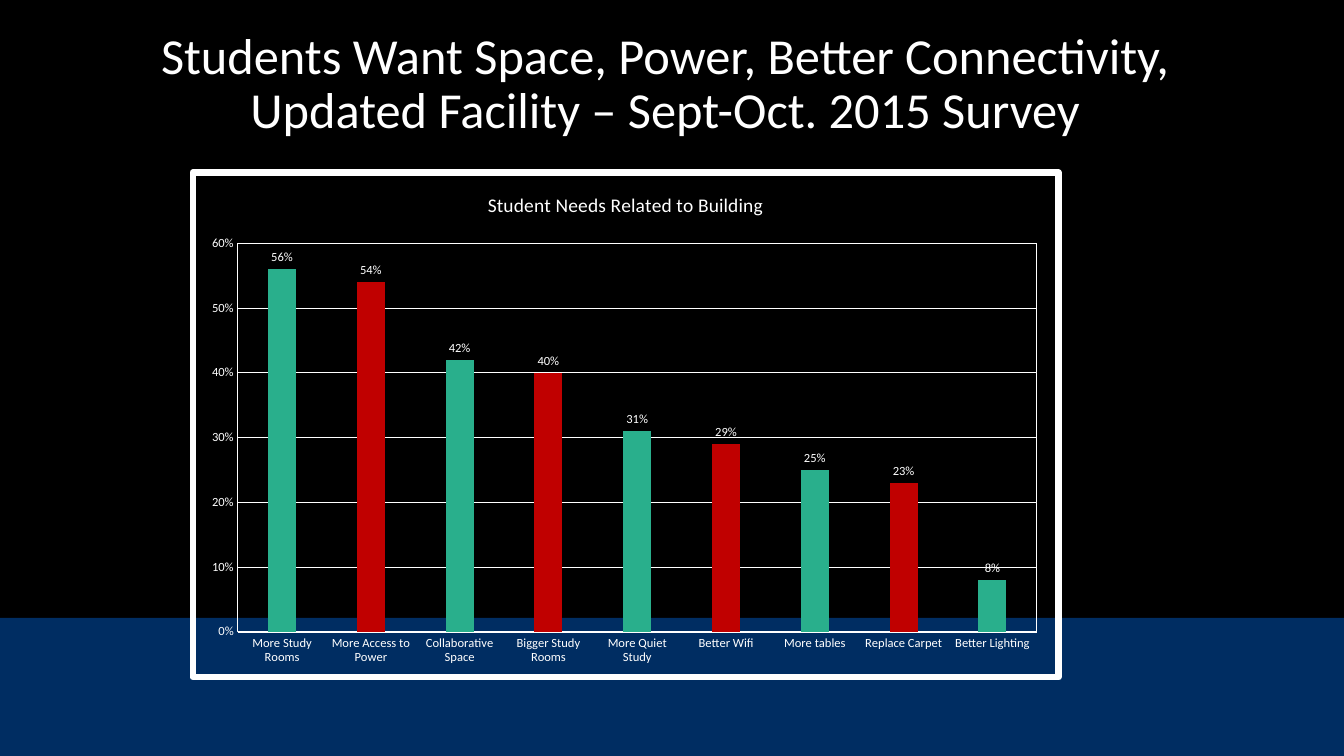
from dataclasses import dataclass
from typing import NamedTuple

from lxml.etree import _Element as Element
from pptx import Presentation
from pptx.chart.axis import _BaseAxis as Axis
from pptx.chart.chart import Chart
from pptx.chart.data import CategoryChartData
from pptx.dml.color import RGBColor
from pptx.enum.chart import XL_CHART_TYPE as ChartType
from pptx.enum.chart import XL_LABEL_POSITION as LabelPosition
from pptx.enum.chart import XL_TICK_MARK as TickMark
from pptx.enum.shapes import MSO_SHAPE as ShapeKind
from pptx.enum.text import MSO_ANCHOR as Anchor
from pptx.enum.text import PP_ALIGN as Align
from pptx.oxml import parse_xml
from pptx.oxml.ns import nsdecls, qn
from pptx.slide import Slide
from pptx.text.text import Font
from pptx.util import Inches, Pt


@dataclass(frozen=True)
class Theme:
    face: str = "Calibri"
    background: RGBColor = RGBColor(0x00, 0x00, 0x00)
    band: RGBColor = RGBColor(0x00, 0x2D, 0x62)
    ink: RGBColor = RGBColor(0xFF, 0xFF, 0xFF)
    green: RGBColor = RGBColor(0x29, 0xAF, 0x8C)
    red: RGBColor = RGBColor(0xC0, 0x00, 0x00)
    title_size: float = 36
    chart_title_size: float = 14
    chart_size: float = 10
    label_size: float = 9
    border_width: float = 4.5
    axis_width: float = 0.75
    grid_width: float = 0.25


class Need(NamedTuple):
    name: str
    share: float


THEME = Theme()
NEEDS = [
    Need("More Study Rooms", 0.56),
    Need("More Access to Power", 0.54),
    Need("Collaborative Space", 0.42),
    Need("Bigger Study Rooms", 0.40),
    Need("More Quiet Study", 0.31),
    Need("Better Wifi", 0.29),
    Need("More tables", 0.25),
    Need("Replace Carpet", 0.23),
    Need("Better Lighting", 0.08),
]


def style_font(font: Font, size: float) -> None:
    font.name = THEME.face
    font.size = Pt(size)
    font.bold = False
    font.color.rgb = THEME.ink


def outline(width: float) -> Element:
    return parse_xml(
        f'<c:spPr {nsdecls("c", "a")}><a:noFill/><a:ln w="{Pt(width)}">'
        f'<a:solidFill><a:srgbClr val="{THEME.ink}"/></a:solidFill>'
        "<a:round/></a:ln></c:spPr>"
    )


def add_band(page: Slide) -> None:
    band = page.shapes.add_shape(
        ShapeKind.RECTANGLE, 0, Inches(6.13), Inches(13.33), Inches(1.37)
    )
    band.shadow.inherit = False
    band.fill.solid()
    band.fill.fore_color.rgb = THEME.band
    band.line.fill.background()


def add_title(page: Slide, text: str) -> None:
    box = page.shapes.add_textbox(
        Inches(0.87), Inches(0.13), Inches(11.46), Inches(1.43)
    )
    frame = box.text_frame
    frame.word_wrap = True
    frame.vertical_anchor = Anchor.MIDDLE
    para = frame.paragraphs[0]
    para.text = text
    para.alignment = Align.CENTER
    para.line_spacing = 0.9
    style_font(para.font, THEME.title_size)


def style_axis(axis: Axis) -> None:
    axis.major_tick_mark = TickMark.NONE
    axis.minor_tick_mark = TickMark.NONE
    style_font(axis.tick_labels.font, THEME.label_size)


def frame_chart(chart: Chart) -> None:
    space = chart.element
    space.find(qn("c:chart")).addnext(outline(THEME.border_width))
    area = space.find(f'{qn("c:chart")}/{qn("c:plotArea")}')
    for layout in area.findall(qn("c:layout")):
        area.remove(layout)
    places = {"x": 0.052, "y": 0.14, "w": 0.923, "h": 0.77}
    modes = '<c:xMode val="edge"/><c:yMode val="edge"/>'
    sizes = "".join(f'<c:{key} val="{share}"/>' for key, share in places.items())
    area.insert(0, parse_xml(
        f'<c:layout {nsdecls("c")}><c:manualLayout><c:layoutTarget val="inner"/>'
        f"{modes}{sizes}</c:manualLayout></c:layout>"
    ))
    area.append(outline(THEME.axis_width))


def add_needs_chart(page: Slide, title: str, needs: list[Need]) -> None:
    table = CategoryChartData(number_format="0%")
    table.categories = [need.name for need in needs]
    table.add_series("Series 1", [need.share for need in needs])
    chart = page.shapes.add_chart(
        ChartType.COLUMN_CLUSTERED,
        Inches(1.88), Inches(1.68), Inches(8.65), Inches(5.07), table,
    ).chart
    style_font(chart.font, THEME.chart_size)
    chart.has_legend = False
    chart.has_title = True
    heading = chart.chart_title.text_frame.paragraphs[0]
    heading.text = title
    style_font(heading.font, THEME.chart_title_size)

    style_axis(chart.category_axis)
    line = chart.category_axis.format.line
    line.color.rgb = THEME.ink
    line.width = Pt(THEME.axis_width)

    shares = chart.value_axis
    style_axis(shares)
    shares.minimum_scale, shares.maximum_scale, shares.major_unit = 0, 0.6, 0.1
    shares.tick_labels.number_format = "0%"
    shares.tick_labels.number_format_is_linked = False
    shares.format.line.fill.background()
    grid = shares.major_gridlines.format.line
    grid.color.rgb = THEME.ink
    grid.width = Pt(THEME.grid_width)

    plot = chart.plots[0]
    plot.gap_width = 219
    plot.overlap = -27
    plot.vary_by_categories = False
    series = plot.series[0]
    series.format.fill.solid()
    series.format.fill.fore_color.rgb = THEME.green
    for index in range(1, len(needs), 2):
        fill = series.points[index].format.fill
        fill.solid()
        fill.fore_color.rgb = THEME.red
    labels = series.data_labels
    labels.show_value = True
    labels.number_format = "0%"
    labels.number_format_is_linked = False
    labels.position = LabelPosition.OUTSIDE_END
    style_font(labels.font, THEME.label_size)
    frame_chart(chart)


def main() -> None:
    deck = Presentation()
    deck.slide_width = Inches(13.33)
    deck.slide_height = Inches(7.5)
    page = deck.slides.add_slide(deck.slide_layouts[6])
    page.background.fill.solid()
    page.background.fill.fore_color.rgb = THEME.background
    add_band(page)
    add_title(
        page,
        "Students Want Space, Power, Better Connectivity, "
        "Updated Facility – Sept-Oct. 2015 Survey",
    )
    add_needs_chart(page, "Student Needs Related to Building", NEEDS)
    deck.save("out.pptx")


if __name__ == "__main__":
    main()
